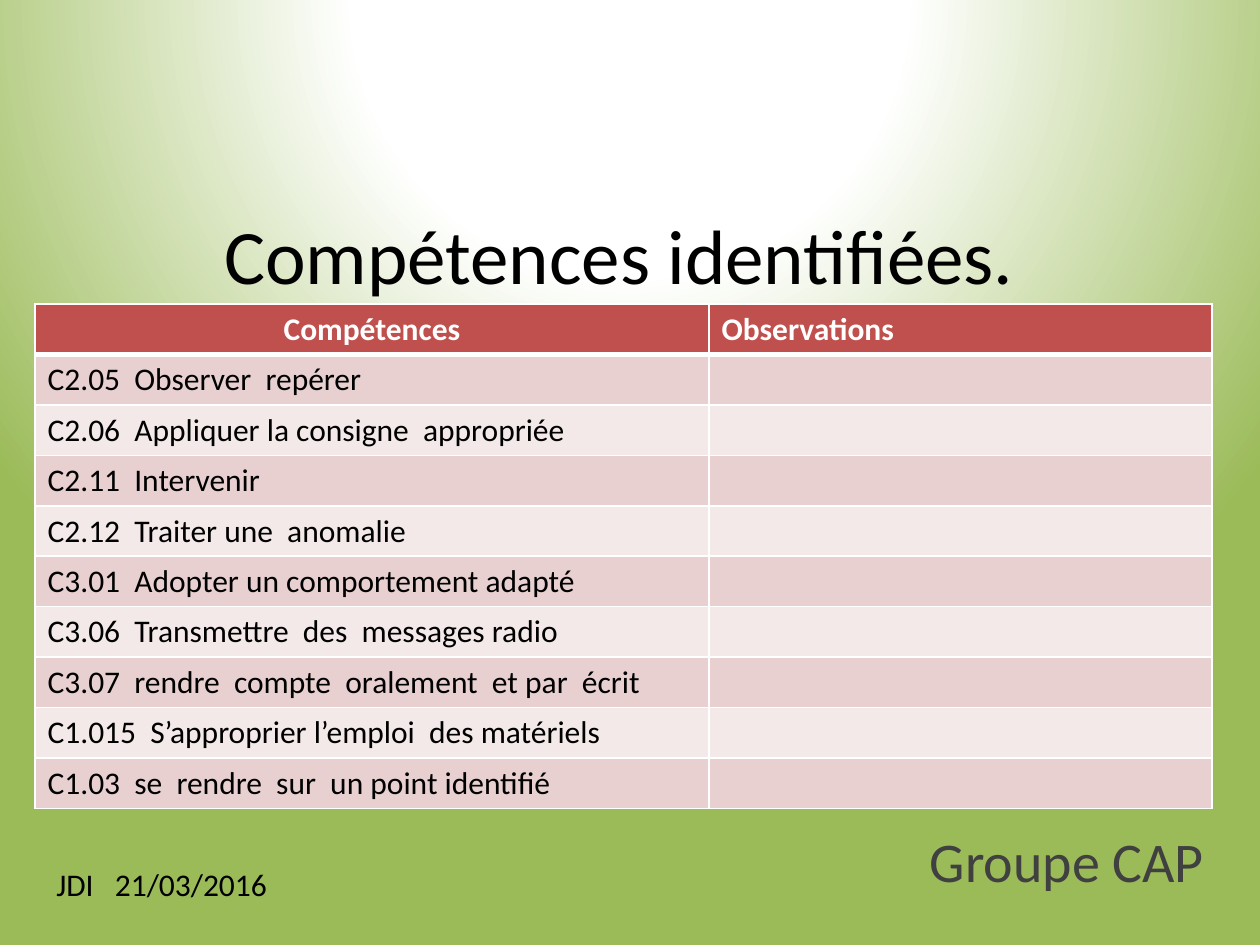
from lxml.etree import SubElement
from pptx import Presentation
from pptx.dml.color import RGBColor
from pptx.enum.text import MSO_ANCHOR, MSO_AUTO_SIZE, PP_ALIGN
from pptx.oxml.ns import qn
from pptx.util import Emu, Pt

COLORS = {
    "white": "FFFFFF",
    "green": "9BBB59",
    "black": "000000",
    "gray": "404040",
    "header": "C0504D",
    "odd_row": "E8D0D0",
    "even_row": "F4E9E9",
}
FONT = "Calibri"
HEADINGS = ["Compétences", "Observations"]
SKILLS = [
    "C2.05  Observer  repérer",
    "C2.06  Appliquer la consigne  appropriée",
    "C2.11  Intervenir",
    "C2.12  Traiter une  anomalie",
    "C3.01  Adopter un comportement adapté",
    "C3.06  Transmettre  des  messages radio",
    "C3.07  rendre  compte  oralement  et par  écrit",
    "C1.015  S’approprier l’emploi  des matériels",
    "C1.03  se  rendre  sur  un point identifié",
]
COLUMN_WIDTHS = [674, 503]
ROW_HEIGHT = 50


def px(length):
    return Emu(round(length * 914400 / 126))


def rgb(name):
    return RGBColor.from_string(COLORS[name])


def write(frame, text, size, color, align=PP_ALIGN.LEFT, bold=False):
    frame.text = text
    paragraph = frame.paragraphs[0]
    paragraph.alignment = align
    for run in paragraph.runs:
        run.font.name = FONT
        run.font.size = Pt(size)
        run.font.bold = bold
        run.font.color.rgb = rgb(color)
    return paragraph


def paint_background(slide):
    slide.background.fill.gradient()
    gradient = slide.element.find(f".//{qn('a:gradFill')}")
    for child in list(gradient):
        gradient.remove(child)
    stops = SubElement(gradient, qn("a:gsLst"))
    for position, color in [(0, "white"), (35, "white"), (100, "green")]:
        stop = SubElement(stops, qn("a:gs"), pos=str(position * 1000))
        SubElement(stop, qn("a:srgbClr"), val=COLORS[color])
    circle = SubElement(gradient, qn("a:path"), path="circle")
    SubElement(circle, qn("a:fillToRect"), l="50000", t="-80000", r="50000", b="180000")


def place_title(slide, text):
    title = slide.shapes.title
    title.left, title.top, title.width, title.height = map(px, (84, 145, 1071, 218))
    write(title.text_frame, text, 44, "black", PP_ALIGN.CENTER)
    title.text_frame.vertical_anchor = MSO_ANCHOR.MIDDLE
    title.text_frame.auto_size = MSO_AUTO_SIZE.NONE


def add_label(slide, box, text, size, color, align=PP_ALIGN.LEFT):
    frame = slide.shapes.add_textbox(*map(px, box)).text_frame
    frame.word_wrap = True
    return write(frame, text, size, color, align)


def set_borders(cell, bottom_width):
    properties = cell._tc.get_or_add_tcPr()
    for side, width in [("L", 1), ("R", 1), ("T", 1), ("B", bottom_width)]:
        line = SubElement(properties, qn(f"a:ln{side}"), w=str(Pt(width)))
        fill = SubElement(line, qn("a:solidFill"))
        SubElement(fill, qn("a:srgbClr"), val=COLORS["white"])


def fill_cell(cell, text, fill, color, align=PP_ALIGN.LEFT, bold=False, bottom_width=1):
    write(cell.text_frame, text, 18, color, align, bold)
    set_borders(cell, bottom_width)
    cell.fill.solid()
    cell.fill.fore_color.rgb = rgb(fill)


def add_skills_table(slide):
    row_count = len(SKILLS) + 1
    box = (35, 304, sum(COLUMN_WIDTHS), ROW_HEIGHT * row_count)
    table = slide.shapes.add_table(row_count, len(HEADINGS), *map(px, box)).table
    for column, width in zip(table.columns, COLUMN_WIDTHS):
        column.width = px(width)
    for row in table.rows:
        row.height = px(ROW_HEIGHT)
    for index, (heading, align) in enumerate(zip(HEADINGS, [PP_ALIGN.CENTER, PP_ALIGN.LEFT])):
        fill_cell(table.cell(0, index), heading, "header", "white", align, True, 3)
    for index, skill in enumerate(SKILLS, start=1):
        fill = "odd_row" if index % 2 else "even_row"
        for column, text in enumerate([skill, ""]):
            fill_cell(table.cell(index, column), text, fill, "black")


def main():
    presentation = Presentation()
    presentation.slide_width, presentation.slide_height = px(1260), px(945)
    slide = presentation.slides.add_slide(presentation.slide_layouts[5])
    paint_background(slide)
    place_title(slide, "Compétences identifiées.")
    group = add_label(slide, (898, 820, 338, 100), "Groupe CAP", 32, "gray", PP_ALIGN.CENTER)
    group.space_before = Pt(6.4)
    add_label(slide, (44, 859, 318, 50), "JDI   21/03/2016", 18, "black")
    add_skills_table(slide)
    presentation.save("out.pptx")


if __name__ == "__main__":
    main()
